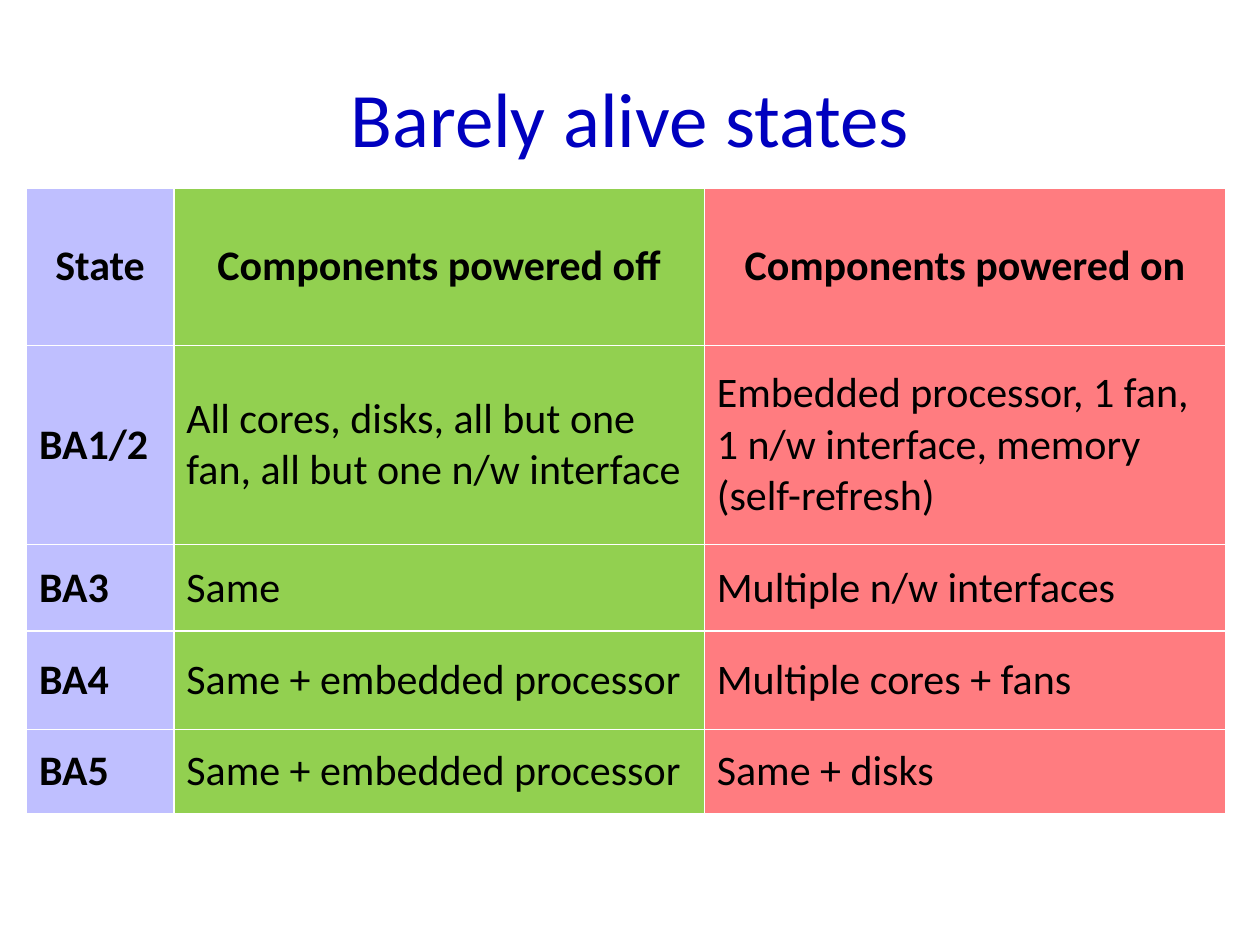
from pptx import Presentation
from pptx.dml.color import RGBColor
from pptx.enum import text
from pptx.util import Inches, Pt

FONT = "Calibri"
BLUE = RGBColor(0x00, 0x00, 0xBF)
BLACK = RGBColor(0x00, 0x00, 0x00)
LAVENDER = RGBColor(0xBF, 0xBF, 0xFF)
GREEN = RGBColor(0x92, 0xD0, 0x50)
RED = RGBColor(0xFF, 0x7C, 0x80)

COLUMN_FILLS = [LAVENDER, GREEN, RED]
COLUMN_WIDTHS = [1.17, 4.21, 4.14]
ROW_HEIGHTS = [1.25, 1.58, 0.69, 0.78, 0.67]
STATES = [
    ("State", "Components powered off", "Components powered on"),
    ("BA1/2", "All cores, disks, all but one fan, all but one n/w interface",
     "Embedded processor, 1 fan, 1 n/w interface, memory (self-refresh)"),
    ("BA3", "Same", "Multiple n/w interfaces"),
    ("BA4", "Same + embedded processor", "Multiple cores + fans"),
    ("BA5", "Same + embedded processor", "Same + disks"),
]


def style_paragraph(para, size, color, align, bold=False):
    para.alignment = align
    para.font.name = FONT
    para.font.size = Pt(size)
    para.font.bold = bold
    para.font.color.rgb = color


def place_title(page, left, top, width, height):
    title = page.shapes.title
    title.left, title.top = Inches(left), Inches(top)
    title.width, title.height = Inches(width), Inches(height)
    title.text_frame.text = "Barely alive states"
    title.text_frame.vertical_anchor = text.MSO_ANCHOR.MIDDLE
    style_paragraph(title.text_frame.paragraphs[0], 44, BLUE, text.PP_ALIGN.CENTER)


def place_state_table(page, left, top):
    """Add the table; its default style draws the white rules between cells."""
    table = page.shapes.add_table(
        len(ROW_HEIGHTS), len(COLUMN_WIDTHS), Inches(left), Inches(top),
        Inches(sum(COLUMN_WIDTHS)), Inches(sum(ROW_HEIGHTS))).table
    for column, width in zip(table.columns, COLUMN_WIDTHS):
        column.width = Inches(width)
    for row, height in zip(table.rows, ROW_HEIGHTS):
        row.height = Inches(height)

    for r, state in enumerate(STATES):
        align = text.PP_ALIGN.CENTER if r == 0 else text.PP_ALIGN.LEFT
        for c, wording in enumerate(state):
            cell = table.cell(r, c)
            cell.text = wording
            cell.vertical_anchor = text.MSO_ANCHOR.MIDDLE
            cell.fill.solid()
            cell.fill.fore_color.rgb = COLUMN_FILLS[c]
            style_paragraph(cell.text_frame.paragraphs[0], 24, BLACK, align,
                            bold=r == 0 or c == 0)


def main():
    deck = Presentation()
    deck.slide_width, deck.slide_height = Inches(10), Inches(7.5)
    page = deck.slides.add_slide(deck.slide_layouts[5])
    place_title(page, 0.5, 0.3, 9, 1.25)
    place_state_table(page, 0.21, 1.49)
    deck.save("out.pptx")


if __name__ == "__main__":
    main()
